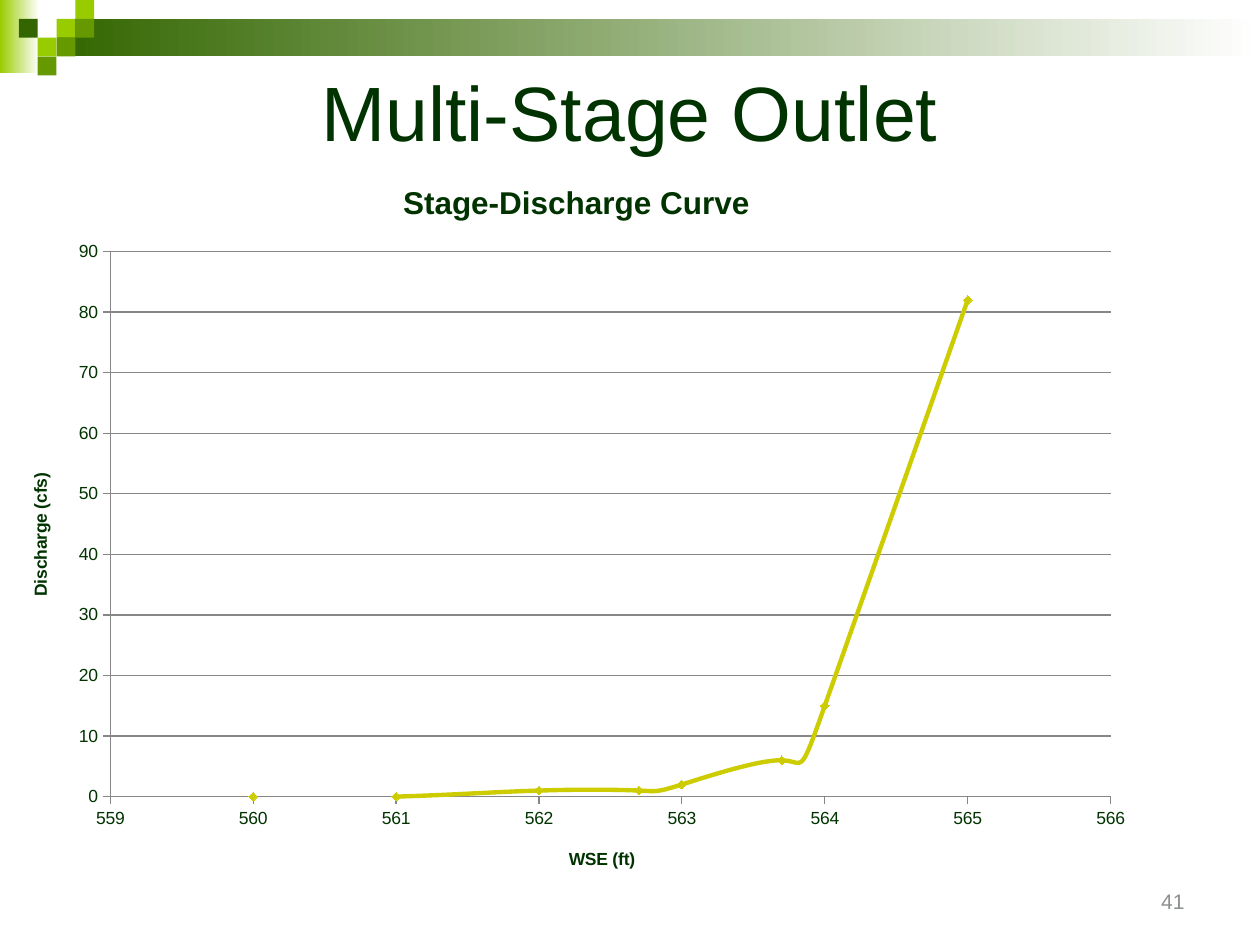
from dataclasses import dataclass

from lxml.etree import SubElement
from pptx import Presentation
from pptx.chart.data import XyChartData
from pptx.dml.color import RGBColor
from pptx.enum.chart import XL_CHART_TYPE as ChartType
from pptx.enum.chart import XL_MARKER_STYLE as Marker
from pptx.enum.chart import XL_TICK_MARK as Tick
from pptx.enum.shapes import MSO_SHAPE as Shape
from pptx.enum.text import MSO_ANCHOR as Anchor
from pptx.enum.text import PP_ALIGN as Align
from pptx.oxml.ns import qn
from pptx.util import Cm, Pt


@dataclass(frozen=True)
class Theme:
    """Colours, font and type sizes of the slide."""
    font: str = "Arial"
    ink: str = "003300"
    dark: str = "336600"
    mid: str = "669900"
    lime: str = "99CC00"
    white: str = "FFFFFF"
    curve: str = "CCCC00"
    rule: str = "868686"
    number: str = "8C908C"
    heading_size: int = 44
    chart_title_size: int = 18
    label_size: int = 10
    number_size: int = 12


THEME = Theme()
STAGE_DISCHARGE = [
    (560, 0), (561, 0), (562, 1), (562.7, 1),
    (563, 2), (563.7, 6), (564, 15), (565, 82),
]


def rgb(code):
    """Turn a hex code into a colour."""
    return RGBColor.from_string(code)


def style_font(font, size, color=THEME.ink, bold=False):
    """Set the face, size, colour and weight of a font."""
    font.name, font.size, font.bold = THEME.font, Pt(size), bold
    font.color.rgb = rgb(color)


def add_text(slide, text, box, *, size, color, align):
    """Place one line of text, vertically centred in its box."""
    frame = slide.shapes.add_textbox(*map(Cm, box)).text_frame
    frame.word_wrap = True
    frame.vertical_anchor = Anchor.MIDDLE
    line = frame.paragraphs[0]
    line.text, line.alignment = text, align
    style_font(line.font, size, color)


def add_block(slide, box, color, fade_to=None):
    """Draw a borderless rectangle, plain or fading to the right."""
    block = slide.shapes.add_shape(Shape.RECTANGLE, *map(Cm, box))
    block.shadow.inherit = False
    block.line.fill.background()
    if fade_to is None:
        block.fill.solid()
        block.fill.fore_color.rgb = rgb(color)
        return
    block.fill.gradient()
    block.fill.gradient_angle = 0
    for stop, code, position in zip(block.fill.gradient_stops, (color, fade_to), (0, 1)):
        stop.color.rgb = rgb(code)
        stop.position = position


def add_banner(slide, box):
    """Draw the fading bars and the stepped squares of the banner."""
    left, top, width, height = box
    unit = height / 4
    add_block(slide, (left, top, 0.79, 1.47), THEME.lime, THEME.white)
    bar_left = 3 * unit
    add_block(slide, (left + bar_left, top + unit, width - bar_left, 2 * unit),
              THEME.dark, THEME.white)
    squares = [
        (3, 1, THEME.lime), (4, 0, THEME.lime), (4, 1, THEME.mid), (2, 2, THEME.lime),
        (1, 1, THEME.dark), (3, 2, THEME.mid), (2, 3, THEME.mid),
    ]
    for column, row, color in squares:
        add_block(slide, (left + column * unit, top + row * unit, unit, unit), color)


def set_layout(parent, index, modes, **percents):
    """Fix the place of a chart part in percents of the chart."""
    for old in parent.findall(qn("c:layout")):
        parent.remove(old)
    layout = SubElement(parent, qn("c:layout"))
    parent.insert(index, layout)
    manual = SubElement(layout, qn("c:manualLayout"))
    fractions = {tag: percent / 100 for tag, percent in percents.items()}
    for tag, value in (modes | fractions).items():
        SubElement(manual, qn(f"c:{tag}")).set("val", str(value))


def set_title(owner, title, text, size, x, y):
    """Write a bold chart or axis title at a fixed place."""
    owner.has_title = True
    title = getattr(owner, title)
    line = title.text_frame.paragraphs[0]
    run = line.add_run()
    run.text = text
    style_font(run.font, size, bold=True)
    set_layout(title._element, 1, {"xMode": "edge", "yMode": "edge"}, x=x, y=y)


def style_axis(axis, low, high, step):
    """Scale an axis and give it outer ticks and a thin line."""
    axis.minimum_scale, axis.maximum_scale, axis.major_unit = low, high, step
    axis.major_tick_mark, axis.minor_tick_mark = Tick.OUTSIDE, Tick.NONE
    axis.has_major_gridlines = False
    axis.tick_labels.number_format = "General"
    axis.tick_labels.number_format_is_linked = False
    axis.format.line.color.rgb = rgb(THEME.rule)
    axis.format.line.width = Pt(0.75)
    style_font(axis.tick_labels.font, THEME.label_size)


def style_curve(curve):
    """Draw the series as a smooth line with diamond markers."""
    for smooth in curve._element.findall(qn("c:smooth")):
        smooth.set("val", "1")
    curve.format.line.color.rgb = rgb(THEME.curve)
    curve.format.line.width = Pt(2.5)
    marker = curve.marker
    marker.style, marker.size = Marker.DIAMOND, 5
    marker.format.fill.solid()
    marker.format.fill.fore_color.rgb = rgb(THEME.curve)
    marker.format.line.color.rgb = rgb(THEME.curve)


def add_curve(slide, box):
    """Chart discharge against water surface elevation."""
    data = XyChartData()
    points = data.add_series("Series 1")
    for stage, discharge in STAGE_DISCHARGE:
        points.add_data_point(stage, discharge)
    chart = slide.shapes.add_chart(ChartType.XY_SCATTER_SMOOTH, *map(Cm, box), data).chart
    chart.has_legend = False
    style_font(chart.font, THEME.label_size)
    set_title(chart, "chart_title", "Stage-Discharge Curve", THEME.chart_title_size, 34.4, 2.5)

    stage_axis, discharge_axis = chart.category_axis, chart.value_axis
    style_axis(stage_axis, 559, 566, 1)
    style_axis(discharge_axis, 0, 90, 10)
    set_title(stage_axis, "axis_title", "WSE (ft)", THEME.label_size, 49.1, 92.9)
    set_title(discharge_axis, "axis_title", "Discharge (cfs)", THEME.label_size, 1.9, 42.2)
    discharge_axis.has_major_gridlines = True
    grid = discharge_axis.major_gridlines.format.line
    grid.color.rgb, grid.width = rgb(THEME.rule), Pt(0.75)

    plot = chart.plots[0]
    plot.vary_by_categories = False
    style_curve(plot.series[0])
    set_layout(chart._chartSpace.chart.plotArea, 0,
               {"layoutTarget": "inner", "xMode": "edge", "yMode": "edge"},
               x=9.3, y=12.7, w=87.45, h=73.7)


def main():
    """Build the slide and save it."""
    deck = Presentation()
    deck.slide_width, deck.slide_height = Cm(25.4), Cm(19.05)
    slide = deck.slides.add_slide(deck.slide_layouts[6])
    add_banner(slide, (0, 0, 25.4, 1.52))
    add_text(slide, "41", (18.21, 17.65, 5.92, 1.02),
             size=THEME.number_size, color=THEME.number, align=Align.RIGHT)
    add_text(slide, "Multi-Stage Outlet", (1.27, 1.29, 22.86, 1.9),
             size=THEME.heading_size, color=THEME.ink, align=Align.CENTER)
    add_curve(slide, (0.08, 3.18, 23.06, 14.91))
    deck.save("out.pptx")


if __name__ == "__main__":
    main()
